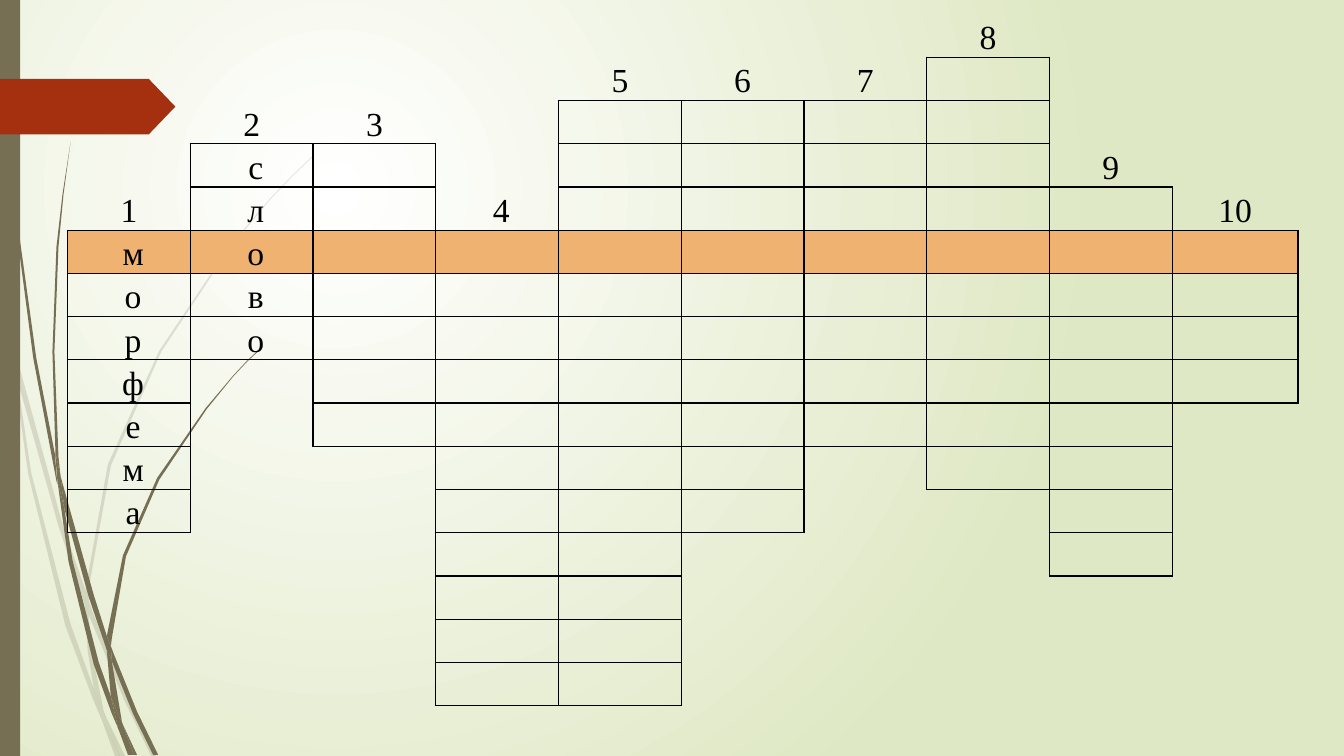
"""Build a crossword slide about word parts on a wispy green background."""
from dataclasses import dataclass

from lxml import etree
from pptx import Presentation
from pptx.dml.color import RGBColor
from pptx.enum.shapes import MSO_SHAPE
from pptx.enum.text import MSO_ANCHOR, PP_ALIGN
from pptx.oxml.ns import qn
from pptx.util import Pt

RECTANGLE, PENTAGON = MSO_SHAPE.RECTANGLE, MSO_SHAPE.PENTAGON
CENTER, TOP = PP_ALIGN.CENTER, MSO_ANCHOR.TOP
WHITE = RGBColor(0xFF, 0xFF, 0xFF)
BLACK = RGBColor(0x00, 0x00, 0x00)
PALE_GREEN = RGBColor(0xDF, 0xE8, 0xC4)
OLIVE = RGBColor(0x76, 0x6F, 0x54)
RUST = RGBColor(0xA5, 0x30, 0x10)
ORANGE = RGBColor(0xF0, 0xB2, 0x70)

WISP_UNIT = Pt(0.72)
ROWS, KEY_ROW, ROW_HEIGHT = 16, 5, 30.87
COLUMN_WIDTH, LAST_COLUMN_WIDTH = 87.7, 89.8
TABLE_LEFT, TABLE_TOP = 48.24, 10.08
MARGIN, LETTER_SHIFT = 5, 6
NO_STYLE = "{2D5ABB26-0587-4C30-8999-92F81FD0307C}"
SIDES = {"a:lnL": (0, -1), "a:lnR": (0, 1), "a:lnT": (-1, 0), "a:lnB": (1, 0)}
PARA_FORMAT = {"alignment": CENTER, "line_spacing": 1.15, "space_after": Pt(10)}
FONT_FORMAT = {"name": "Times New Roman", "size": Pt(24)}


@dataclass(frozen=True)
class Word:
    """A vertical crossword word: first row, cell count and known letters."""
    top: int
    length: int
    letters: str = ""
    number_shift: float = 0

    def covers(self, row: int) -> bool:
        """Tell whether the word has a cell in the row."""
        return self.top <= row < self.top + self.length


@dataclass(frozen=True)
class Block:
    """A plain filled shape."""
    kind: MSO_SHAPE
    left: float
    top: float
    width: float
    height: float
    color: RGBColor


@dataclass(frozen=True)
class Wisp:
    """A thin grass outline in hundredths of an inch, with its opacity."""
    points: tuple[tuple[int, int], ...]
    opacity: int


WORDS = (
    Word(5, 7, "морфема"), Word(3, 5, "слово"), Word(3, 7),
    Word(5, 11, number_shift=LETTER_SHIFT), Word(2, 14), Word(2, 10),
    Word(2, 8), Word(1, 10), Word(4, 9), Word(5, 4),
)
BLOCKS = (
    Block(RECTANGLE, 0, 0, 14.4, 540, OLIVE),
    Block(PENTAGON, 0, 56.3, 125.3, 39.8, RUST),
)
FAINT_OUTLINES = (
    ((11, 350), (9, 322), (0, 282), (0, 299), (10, 344)),
    ((58, 522), (84, 599), (85, 586), (62, 520), (14, 345), (17, 376)),
    ((92, 607), (88, 596), (88, 610), (123, 694), (150, 750), (155, 750),
     (127, 692)),
    ((119, 750), (124, 750), (105, 711)),
    ((93, 683), (70, 619), (31, 469), (17, 376), (11, 350), (28, 470),
     (65, 621), (92, 693), (101, 714), (99, 707)),
    ((84, 599), (87, 646), (93, 683), (96, 692), (105, 711), (103, 706),
     (91, 646), (88, 610), (88, 608)),
    ((88, 584), (110, 462), (160, 349), (229, 245), (268, 198), (290, 175),
     (312, 154), (312, 153), (289, 175), (268, 197), (228, 244), (158, 348),
     (107, 461), (85, 584), (85, 586), (88, 596)),
    ((101, 714), (114, 750), (119, 750)),
    ((88, 608), (88, 610), (88, 596), (85, 586), (84, 599)),
    ((96, 692), (93, 683), (99, 707), (101, 714), (119, 750), (105, 711)),
)
SOLID_OUTLINES = (
    ((7, 110), (17, 233), (33, 355), (56, 477), (57, 481), (55, 457),
     (55, 453), (36, 355), (19, 232), (8, 109), (5, 48), (4, 0), (3, 0),
     (4, 48)),
    ((88, 592), (106, 645), (106, 631), (93, 590), (60, 472), (64, 505)),
    ((113, 649), (110, 641), (111, 656), (132, 708), (152, 749), (157, 749),
     (136, 706)),
    ((110, 691), (98, 657), (72, 556), (64, 505), (57, 477), (68, 557),
     (93, 659), (111, 708), (117, 722), (116, 717)),
    ((60, 472), (58, 453), (54, 349), (58, 245), (63, 193), (70, 141),
     (62, 193), (56, 245), (52, 349), (55, 449)),
    ((133, 749), (136, 749), (122, 719)),
    ((57, 477), (64, 505), (60, 472), (55, 449), (55, 453)),
    ((111, 633), (125, 552), (158, 476), (205, 406), (231, 374), (245, 359),
     (261, 344), (260, 344), (245, 358), (231, 373), (204, 405), (156, 474),
     (122, 551), (106, 631), (110, 641)),
    ((117, 722), (127, 749), (131, 749)),
    ((106, 645), (110, 691), (116, 706), (122, 719), (121, 716), (111, 656),
     (109, 651)),
    ((106, 645), (109, 651), (111, 656), (110, 641), (106, 631)),
    ((116, 706), (110, 691), (116, 717), (117, 722), (130, 749), (133, 749),
     (122, 719)),
)
WISPS = (*(Wisp(points, 20) for points in FAINT_OUTLINES),
         *(Wisp(points, 100) for points in SOLID_OUTLINES))


def paint_background(page) -> None:
    """Give the page a round gradient centred in its upper left part."""
    fill = page.background.fill
    fill.gradient()
    for stop, color in zip(fill.gradient_stops, (WHITE, PALE_GREEN)):
        stop.color.rgb = color
    linear = page.element.find(".//" + qn("a:lin"))
    circle = etree.Element(qn("a:path"), path="circle")
    etree.SubElement(circle, qn("a:fillToRect"),
                     l="50000", t="50000", r="100000", b="100000")
    linear.getparent().replace(linear, circle)


def fill_plain(shape, color: RGBColor) -> None:
    """Fill a shape and clear its line and shadow."""
    shape.shadow.inherit = False
    shape.fill.solid()
    shape.fill.fore_color.rgb = color
    shape.line.fill.background()


def draw_wisp(page, wisp: Wisp) -> None:
    """Draw one grass outline."""
    builder = page.shapes.build_freeform(*wisp.points[0], scale=WISP_UNIT)
    builder.add_line_segments(wisp.points[1:], close=True)
    shape = builder.convert_to_shape()
    fill_plain(shape, OLIVE)
    if wisp.opacity < 100:
        color = shape.element.spPr.find(qn("a:solidFill"))[0]
        etree.SubElement(color, qn("a:alpha"), val=str(wisp.opacity * 1000))


def draw_block(page, block: Block) -> None:
    """Draw one plain shape."""
    frame = map(Pt, (block.left, block.top, block.width, block.height))
    shape = page.shapes.add_shape(block.kind, *frame)
    if block.kind == PENTAGON:
        shape.adjustments[0] = 0.48
    fill_plain(shape, block.color)


def in_word(row: int, column: int) -> bool:
    """Tell whether a grid place belongs to a word."""
    return 0 <= column < len(WORDS) and WORDS[column].covers(row)


def draw_borders(cell, row: int, column: int) -> None:
    """Line every side of the cell that touches a word."""
    properties = cell._tc.get_or_add_tcPr()
    for tag, (down, across) in SIDES.items():
        line = etree.SubElement(properties, qn(tag), w=str(Pt(1)))
        if in_word(row, column) or in_word(row + down, column + across):
            solid = etree.SubElement(line, qn("a:solidFill"))
            etree.SubElement(solid, qn("a:srgbClr"), val=str(BLACK))
        else:
            etree.SubElement(line, qn("a:noFill"))


def write_cell(cell, text: str, shift: float) -> None:
    """Write centred text, moved right by widening the left margin."""
    cell.margin_left = Pt(MARGIN + shift)
    para = cell.text_frame.paragraphs[0]
    for name, value in PARA_FORMAT.items():
        setattr(para, name, value)
    span = para.add_run()
    span.text = text
    for name, value in FONT_FORMAT.items():
        setattr(span.font, name, value)
    span.font.color.rgb = BLACK


def draw_crossword(page) -> None:
    """Draw the grid with its numbers, letters and highlighted key row."""
    widths = [COLUMN_WIDTH] * (len(WORDS) - 1) + [LAST_COLUMN_WIDTH]
    frame = map(Pt, (TABLE_LEFT, TABLE_TOP, sum(widths), ROWS * ROW_HEIGHT))
    holder = page.shapes.add_table(ROWS, len(WORDS), *frame)
    table = holder.table
    table.first_row = table.horz_banding = False
    holder.element.find(".//" + qn("a:tableStyleId")).text = NO_STYLE
    for row in table.rows:
        row.height = Pt(ROW_HEIGHT)
    for column, (word, width) in enumerate(zip(WORDS, widths)):
        table.columns[column].width = Pt(width)
        for row in range(ROWS):
            cell = table.cell(row, column)
            cell.margin_left = cell.margin_right = Pt(MARGIN)
            cell.margin_top = cell.margin_bottom = 0
            cell.vertical_anchor = TOP
            draw_borders(cell, row, column)
            if row == KEY_ROW:
                cell.fill.solid()
                cell.fill.fore_color.rgb = ORANGE
            else:
                cell.fill.background()
        write_cell(table.cell(word.top - 1, column), str(column + 1), word.number_shift)
        for row, letter in enumerate(word.letters, word.top):
            write_cell(table.cell(row, column), letter, LETTER_SHIFT)


def main() -> None:
    """Build and save the deck."""
    deck = Presentation()
    deck.slide_width, deck.slide_height = Pt(960), Pt(540)
    page = deck.slides.add_slide(deck.slide_layouts[6])
    paint_background(page)
    for wisp in WISPS:
        draw_wisp(page, wisp)
    for block in BLOCKS:
        draw_block(page, block)
    draw_crossword(page)
    deck.save("out.pptx")


if __name__ == "__main__":
    main()
